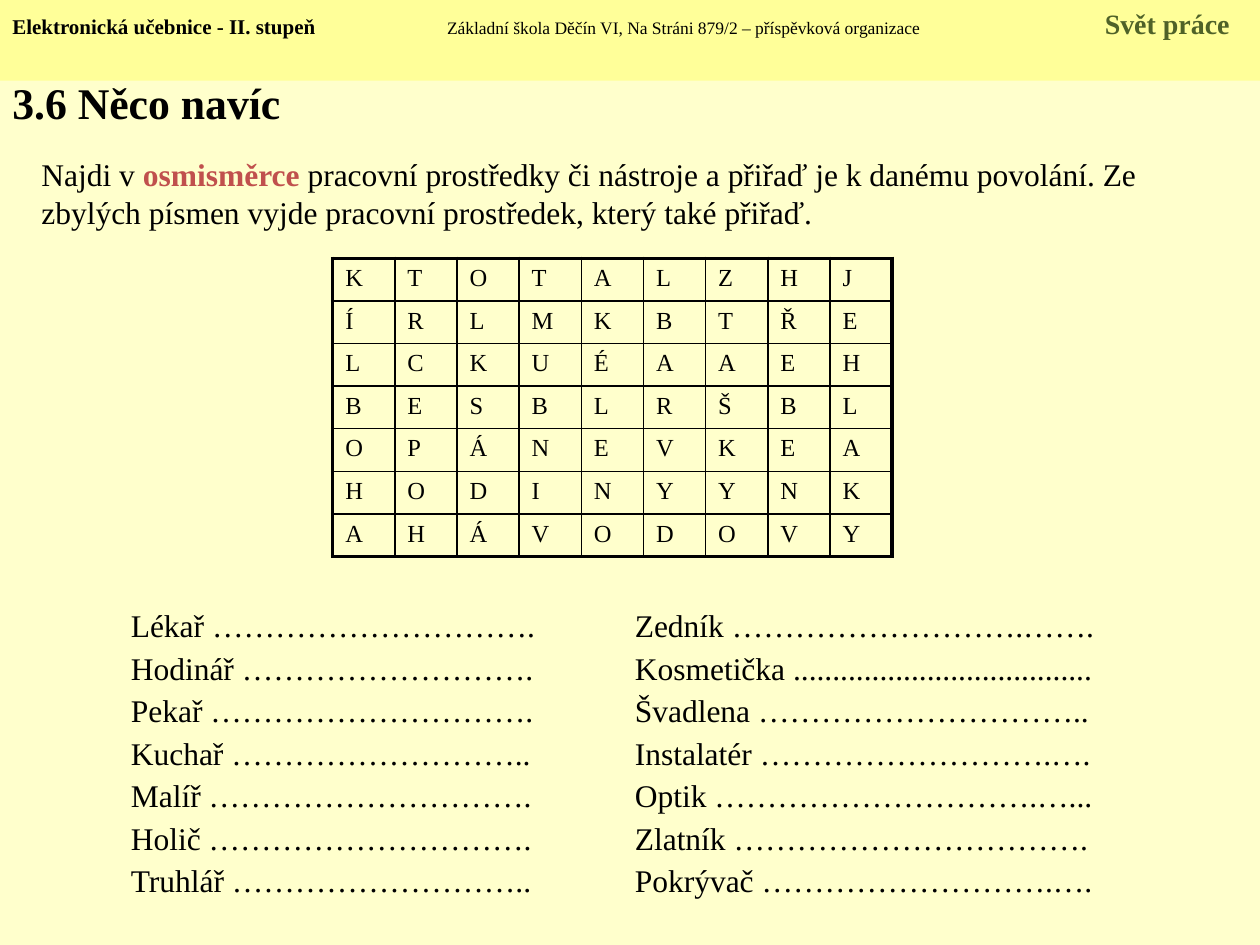
from typing import NamedTuple

from lxml.etree import SubElement as Sub
from pptx import Presentation
from pptx.dml.color import RGBColor
from pptx.enum.shapes import MSO_SHAPE as Shape
from pptx.enum.text import MSO_ANCHOR as Anchor, PP_ALIGN as Align
from pptx.oxml import parse_xml
from pptx.oxml.ns import nsdecls, qn
from pptx.util import Inches, Pt

FONT = "Times New Roman"
BLACK = "000000"
GRID = ["KTOTALZHJ", "ÍRLMKBTŘE", "LCKUÉAAEH", "BESBLRŠBL",
        "OPÁNEVKEA", "HODINYYNK", "AHÁVODOVY"]
JOBS = [
    "Lékař ………………………….\tZedník ……………………….…….",
    "Hodinář ……………………….\tKosmetička ......................................",
    "Pekař ………………………….\tŠvadlena …………………………..",
    "Kuchař ………………………..\tInstalatér ……………………….….",
    "Malíř ………………………….\tOptik ………………………….…...",
    "Holič ………………………….\tZlatník …………………………….",
    "Truhlář ………………………..\tPokrývač ……………………….….",
]


class Part(NamedTuple):
    text: str
    size: float
    bold: bool = False
    color: str = BLACK


def rgb(code: str) -> RGBColor:
    return RGBColor.from_string(code)


def write(para, parts: list[Part]) -> None:
    for part in parts:
        run = para.add_run()
        run.text = part.text
        font = run.font
        font.name, font.size, font.bold = FONT, Pt(part.size), part.bold
        font.color.rgb = rgb(part.color)


def set_tabs(para, stops: list[float]) -> None:
    tabs = Sub(para._p.get_or_add_pPr(), qn("a:tabLst"))
    for stop in stops:
        Sub(tabs, qn("a:tab"), pos=str(Inches(stop)), algn="l")


def add_text(slide, left: float, top: float, width: float, height: float):
    box = slide.shapes.add_textbox(
        Inches(left), Inches(top), Inches(width), Inches(height))
    frame = box.text_frame
    frame.word_wrap = True
    return frame


def add_header(slide) -> None:
    bar = slide.shapes.add_shape(
        Shape.RECTANGLE, 0, 0, Inches(10), Inches(0.64))
    bar.shadow.inherit = False
    bar.fill.solid()
    bar.fill.fore_color.rgb = rgb("FFFF99")
    bar.line.fill.background()
    frame = bar.text_frame
    frame.vertical_anchor = Anchor.TOP
    para = frame.paragraphs[0]
    para.alignment = Align.LEFT
    set_tabs(para, [3.45, 8.67])
    write(para, [
        Part("Elektronická učebnice - II. stupeň\t", 12, True),
        Part("Základní škola Děčín VI, Na Stráni 879/2 "
             "– příspěvková organizace\t", 10),
        Part("Svět práce", 16, True, "4F6228"),
    ])


def set_border(cell, widths: list[float]) -> None:
    """Draw the left, right, top and bottom lines, widths in points."""
    props = cell._tc.get_or_add_tcPr()
    for i, (side, width) in enumerate(zip("LRTB", widths)):
        props.insert(i, parse_xml(
            f'<a:ln{side} {nsdecls("a")} w="{Pt(width)}"><a:solidFill>'
            f'<a:srgbClr val="{BLACK}"/></a:solidFill></a:ln{side}>'))


def add_grid(slide) -> None:
    rows, cols = len(GRID), len(GRID[0])
    table = slide.shapes.add_table(
        rows, cols, Inches(2.64), Inches(2.05),
        Inches(4.44), Inches(2.37)).table
    table.first_row = table.horz_banding = False
    for r, word in enumerate(GRID):
        for c, letter in enumerate(word):
            cell = table.cell(r, c)
            cell.fill.background()
            write(cell.text_frame.paragraphs[0], [Part(letter, 14)])
            edges = [c == 0, c == cols - 1, r == 0, r == rows - 1]
            set_border(cell, [2.25 if edge else 1 for edge in edges])


def add_jobs(slide) -> None:
    frame = add_text(slide, 0.94, 4.73, 7.88, 2.38)
    frame.margin_top = Inches(0.08)
    frame.text = "\n".join(JOBS)
    for i, para in enumerate(frame.paragraphs):
        if i:
            para.space_before = Pt(2.7)
        set_tabs(para, [4])
        for run in para.runs:
            run.font.name, run.font.size = FONT, Pt(18)
            run.font.color.rgb = rgb(BLACK)


def main() -> None:
    deck = Presentation()
    deck.slide_width, deck.slide_height = Inches(10), Inches(7.5)
    slide = deck.slides.add_slide(deck.slide_layouts[6])
    back = slide.background.fill
    back.solid()
    back.fore_color.rgb = rgb("FFFFCC")

    title = add_text(slide, 0, 0.54, 10, 0.53)
    title.vertical_anchor = Anchor.BOTTOM
    write(title.paragraphs[0], [Part("3.6 Něco navíc", 25, True)])

    add_header(slide)

    task = add_text(slide, 0.23, 1.15, 8.98, 0.7)
    task.margin_top = Inches(0.08)
    write(task.paragraphs[0], [
        Part("Najdi v ", 18),
        Part("osmisměrce", 18, True, "C0504D"),
        Part(" pracovní prostředky či nástroje a přiřaď je k danému povolání."
             " Ze zbylých písmen vyjde pracovní prostředek,"
             " který také přiřaď.", 18),
    ])

    add_grid(slide)
    add_jobs(slide)
    deck.save("out.pptx")


if __name__ == "__main__":
    main()
